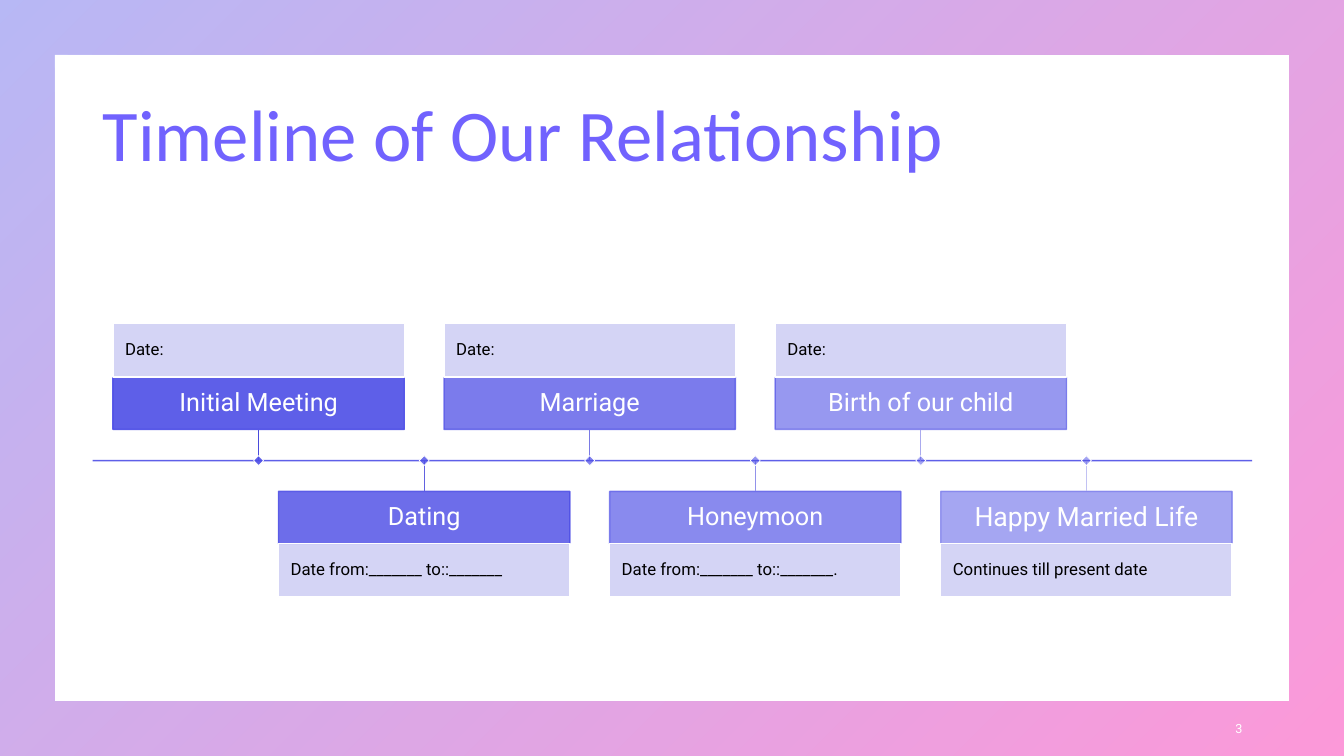
from lxml import etree
from pptx import Presentation
from pptx.dml.color import RGBColor
from pptx.enum.shapes import MSO_CONNECTOR as CONNECTOR, MSO_SHAPE as SHAPE
from pptx.enum.text import MSO_ANCHOR as ANCHOR, PP_ALIGN as ALIGN
from pptx.oxml.ns import qn
from pptx.util import Inches, Pt

INDIGO = RGBColor(0x4D, 0x4E, 0xE6)
PINK = RGBColor(0xF9, 0x00, 0xA0)
VIOLET = RGBColor(0x71, 0x62, 0xFE)
LAVENDER = RGBColor(0xD0, 0xD0, 0xF5)
WHITE = RGBColor(0xFF, 0xFF, 0xFF)
BLACK = RGBColor(0x00, 0x00, 0x00)

# Event name, date text, stem colour, marker opacity, name size
EVENTS = [
    ("Initial Meeting", "Date:", RGBColor(0x4A, 0x4B, 0xDC), 90, 18),
    ("Dating", "Date from:_______ to::_______", RGBColor(0x62, 0x62, 0xE0), 80, 18),
    ("Marriage", "Date:", RGBColor(0x7A, 0x7A, 0xE5), 70, 18),
    ("Honeymoon", "Date from:_______ to::_______.", RGBColor(0x92, 0x92, 0xEA), 60, 18),
    ("Birth of our child", "Date:", RGBColor(0xAA, 0xAA, 0xEE), 50, 18),
    ("Happy Married Life", "Continues till present date", RGBColor(0xC2, 0xC2, 0xF3), 50, 19),
]
CARD_WIDTH, NAME_HEIGHT, DATE_HEIGHT = 2.89, 0.52, 0.53
STEP = 1.642
STEM = 0.305
MARKER = 0.07


def set_opacity(shape, percent):
    """Apply one opacity to every colour the shape has so far."""
    for color in shape.element.spPr.iter(qn("a:srgbClr")):
        etree.SubElement(color, qn("a:alpha")).set("val", str(percent * 1000))


def write(shape, text, size, color, align=ALIGN.LEFT, font_name="Roboto",
          inset=0.1, spacing=0.9):
    frame = shape.text_frame
    frame.text = text
    frame.word_wrap = True
    frame.vertical_anchor = ANCHOR.MIDDLE
    frame.margin_left = frame.margin_right = Inches(inset)
    frame.margin_top = frame.margin_bottom = Inches(min(inset, 0.1))
    paragraph = frame.paragraphs[0]
    paragraph.alignment = align
    paragraph.line_spacing = spacing
    font = paragraph.runs[0].font
    font.name, font.size = font_name, Pt(size)
    font.color.rgb = color
    return paragraph.runs[0]


def add_text(slide, box, *args, **options):
    return write(slide.shapes.add_textbox(*map(Inches, box)), *args, **options)


def add_block(slide, box, fill, opacity):
    shape = slide.shapes.add_shape(SHAPE.RECTANGLE, *map(Inches, box))
    shape.shadow.inherit = False
    shape.fill.solid()
    shape.fill.fore_color.rgb = fill
    set_opacity(shape, opacity)
    return shape


def outline(shape, color, width):
    shape.line.color.rgb = color
    shape.line.width = Pt(width)


def add_line(slide, start, end, color, width):
    line = slide.shapes.add_connector(CONNECTOR.STRAIGHT, *map(Inches, start + end))
    outline(line, color, width)
    etree.SubElement(line.element.spPr, qn("a:effectLst"))
    return line


def add_border(slide, box):
    border = slide.shapes.add_shape(SHAPE.FRAME, *map(Inches, box))
    border.shadow.inherit = False
    border.adjustments[0] = 0.072
    border.line.fill.background()
    border.fill.gradient()
    border.fill.gradient_angle = 315
    for stop, color, position in zip(border.fill.gradient_stops, (INDIGO, PINK), (0, 1)):
        stop.color.rgb = color
        stop.position = position
    set_opacity(border, 40)


def add_card(slide, left, top, name_first, event, opacity):
    name, date, _, _, size = event
    name_top = top if name_first else top + DATE_HEIGHT
    date_top = top + NAME_HEIGHT if name_first else top

    name_block = add_block(slide, (left, name_top, CARD_WIDTH, NAME_HEIGHT), INDIGO, opacity)
    outline(name_block, INDIGO, 1)
    line_color = name_block.element.spPr.find(qn("a:ln")).find(".//" + qn("a:srgbClr"))
    etree.SubElement(line_color, qn("a:alpha")).set("val", str(opacity * 1000))
    write(name_block, name, size, WHITE, ALIGN.CENTER)

    date_block = add_block(slide, (left, date_top, CARD_WIDTH, DATE_HEIGHT), LAVENDER, 90)
    outline(date_block, WHITE, 1)
    write(date_block, date, 12, BLACK, inset=0.12)


def add_timeline(slide, box):
    left, top, width, height = box
    axis = top + height / 2
    axis_line = add_line(slide, (left, axis), (left + width, axis), INDIGO, 1)
    set_opacity(axis_line, 90)

    # Cards alternate above and below the axis, fading to the right
    for index, event in enumerate(EVENTS):
        below = index % 2 == 1
        card_left = left + 0.2 + index * STEP
        center = card_left + CARD_WIDTH / 2
        card_top = axis + STEM if below else top
        add_card(slide, card_left, card_top, below, event, 90 - 8 * index)
        stem_end = axis + STEM if below else axis - STEM
        add_line(slide, (center, axis), (center, stem_end), event[2], 0.5)

        # Diamond marker on the axis
        marker = add_block(slide, (center - MARKER / 2, axis - MARKER / 2, MARKER, MARKER),
                           INDIGO, event[3])
        marker.rotation = 45
        outline(marker, WHITE, 0.5)


def main():
    presentation = Presentation()
    presentation.slide_width, presentation.slide_height = Inches(13.33), Inches(7.5)
    slide = presentation.slides.add_slide(presentation.slide_layouts[6])

    add_border(slide, (0, 0, 13.33, 7.5))
    add_text(slide, (0.92, 0.74, 11.5, 1.26), "Timeline of Our Relationship", 52, VIOLET,
             font_name="Calibri")
    add_timeline(slide, (0.92, 3.21, 11.5, 2.72))

    # Slide number
    number = add_text(slide, (9.42, 7.03, 3, 0.4), "3", 9, WHITE, ALIGN.RIGHT, spacing=1.0)
    number.font.element.set("spc", "150") if hasattr(number.font, "element") else None

    presentation.save("out.pptx")


if __name__ == "__main__":
    main()
